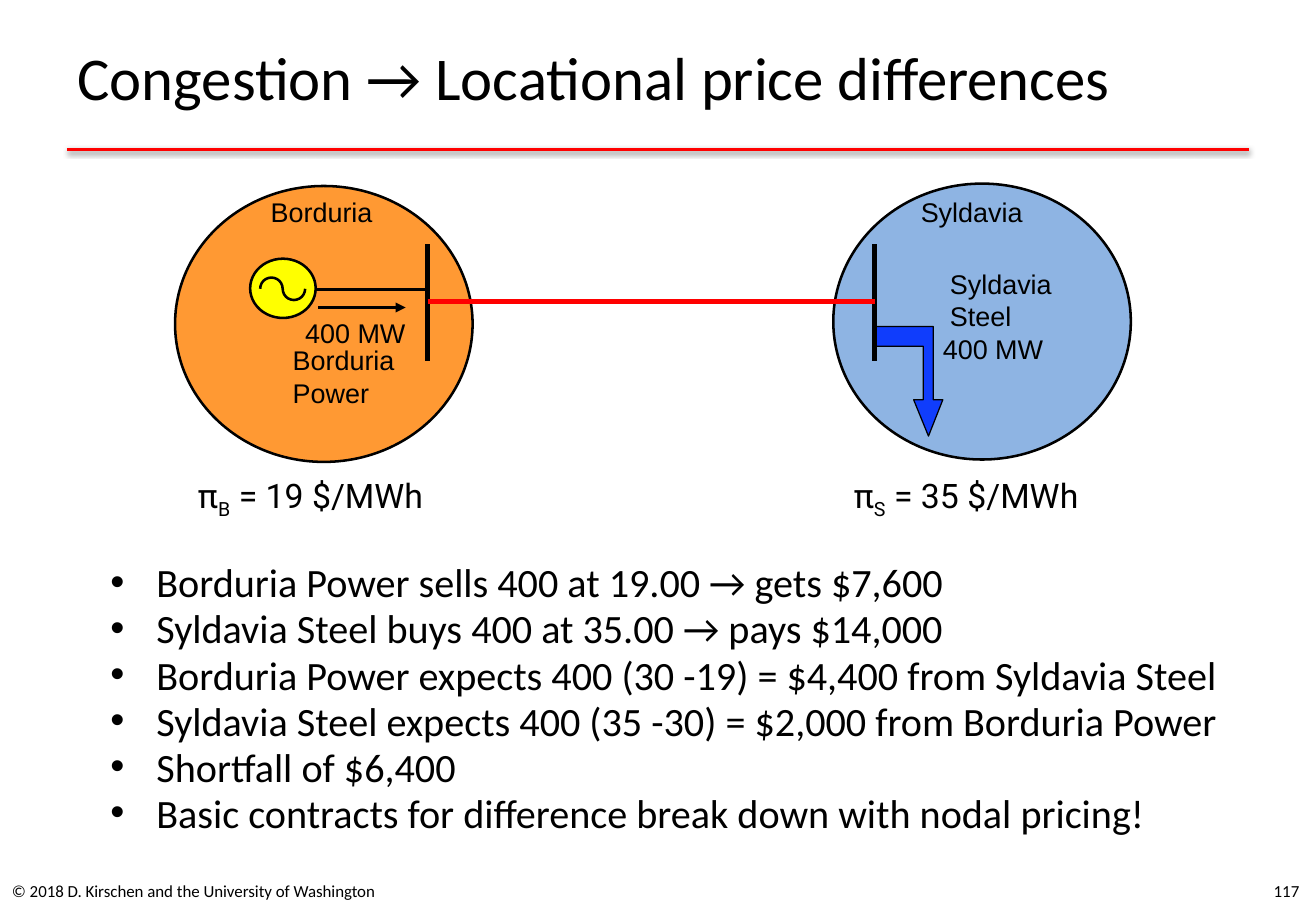
from math import cos, pi, sin
from lxml import etree
from pptx import Presentation
from pptx.dml.color import RGBColor
from pptx.enum.shapes import MSO_CONNECTOR, MSO_SHAPE
from pptx.enum.text import MSO_ANCHOR, PP_ALIGN
from pptx.oxml import parse_xml
from pptx.oxml.ns import nsdecls, qn
from pptx.util import Cm, Pt

COLORS = {
    "black": "000000", "red": "FF0000", "orange": "FF9933",
    "sky": "8EB4E3", "yellow": "FFFF00", "blue": "103DFC",
}

TITLE = "Congestion → Locational price differences"
POINTS = [
    "Borduria Power sells 400 at 19.00 → gets $7,600",
    "Syldavia Steel buys 400 at 35.00 → pays $14,000",
    "Borduria Power expects 400 (30 -19) = $4,400 from Syldavia Steel",
    "Syldavia Steel expects 400 (35 -30) = $2,000 from Borduria Power",
    "Shortfall of $6,400",
    "Basic contracts for difference break down with nodal pricing!",
]
FOOTERS = [
    ("© 2018 D. Kirschen and the University of Washington", 0, 8.99, PP_ALIGN.LEFT),
    ("117", 20.98, 6.43, PP_ALIGN.RIGHT),
]
REGIONS = [(3.66, 3.89, "orange"), (17.42, 3.84, "sky")]
LABELS = [
    ("Borduria", 5.66, 4.09, 3.05),
    ("400 MW", 6.38, 6.63, 2.74),
    ("Borduria Power", 6.12, 7.19, 3.05),
    ("Syldavia", 19.25, 4.09, 3.05),
    ("Syldavia Steel", 19.86, 5.59, 3.05),
    ("400 MW", 19.71, 6.96, 4.11),
]
PRICES = [("B", " = 19 $/MWh", 3.89), ("S", " = 35 $/MWh", 17.6)]
BUS_X = (8.94, 18.29)
BUS_Y = (5.11, 7.54)
LOAD_ARROW = [
    (19.41, 9.12), (19.1, 8.36), (19.3, 8.36), (19.3, 7.24), (18.29, 7.24),
    (18.29, 6.83), (19.51, 6.83), (19.51, 8.36), (19.71, 8.36),
]
WAVE_LEFT, WAVE_Y, WAVE_R, WAVE_STEPS = 5.44, 6.04, 0.235, 12

prs = Presentation()
prs.slide_width, prs.slide_height = Cm(27.51), Cm(19.05)
s = prs.slides.add_slide(prs.slide_layouts[6])


def rgb(name):
    return RGBColor.from_string(COLORS[name])


def style(sp, fill, width):
    sp.shadow.inherit = False
    if fill:
        sp.fill.solid()
        sp.fill.fore_color.rgb = rgb(fill)
    else:
        sp.fill.background()
    sp.line.color.rgb = rgb("black")
    sp.line.width = Pt(width)


def add_ellipse(x, y, w, h, fill):
    style(s.shapes.add_shape(MSO_SHAPE.OVAL, Cm(x), Cm(y), Cm(w), Cm(h)), fill, 1.5)


def add_outline(points, fill, width, close):
    pts = [(Cm(x), Cm(y)) for x, y in points]
    fb = s.shapes.build_freeform(*pts[0])
    fb.add_line_segments(pts[1:], close=close)
    style(fb.convert_to_shape(), fill, width)


def add_line(x1, y1, x2, y2, width, color="black"):
    ln = s.shapes.add_connector(MSO_CONNECTOR.STRAIGHT, Cm(x1), Cm(y1), Cm(x2), Cm(y2))
    ln.line.color.rgb = rgb(color)
    ln.line.width = Pt(width)
    effects = etree.SubElement(ln._element.spPr, qn("a:effectLst"))
    return ln, effects


def add_box(x, y, w, h, anchor=MSO_ANCHOR.TOP, inset=True, wrap=True):
    tf = s.shapes.add_textbox(Cm(x), Cm(y), Cm(w), Cm(h)).text_frame
    tf.word_wrap = wrap
    tf.vertical_anchor = anchor
    if not inset:
        tf.margin_left = tf.margin_top = tf.margin_right = tf.margin_bottom = 0
    return tf


def add_run(p, text, size, font):
    r = p.add_run()
    r.text = text
    r.font.size = Pt(size)
    r.font.name = font
    r.font.color.rgb = rgb("black")
    return r


_, effects = add_line(1.4, 3.12, 26.11, 3.12, 2, "red")
effects.append(parse_xml(
    f'<a:outerShdw {nsdecls("a")} blurRad="39370" dist="20320" dir="5400000" rotWithShape="0">'
    '<a:srgbClr val="000000"><a:alpha val="38000"/></a:srgbClr></a:outerShdw>'))

tf = add_box(1.37, 0.64, 24.31, 1.91, MSO_ANCHOR.MIDDLE)
add_run(tf.paragraphs[0], TITLE, 36, "Calibri")

tf = add_box(2.06, 11.73, 24.54, 7.19)
for i, text in enumerate(POINTS):
    p = tf.paragraphs[0] if i == 0 else tf.add_paragraph()
    p.line_spacing = 0.8
    p.space_before = Pt(4.5)
    add_run(p, text, 23.8, "Calibri")
    pPr = p._p.get_or_add_pPr()
    pPr.set("marL", str(Cm(0.96)))
    pPr.set("indent", str(-Cm(0.96)))
    etree.SubElement(pPr, qn("a:buFont")).set("typeface", "Arial")
    etree.SubElement(pPr, qn("a:buChar")).set("char", "•")

for text, x, w, align in FOOTERS:
    p = add_box(x, 18.11, w, 1.02, MSO_ANCHOR.MIDDLE).paragraphs[0]
    p.alignment = align
    add_run(p, text, 10, "Calibri")

for x, y, fill in REGIONS:
    add_ellipse(x, y, 6.22, 5.77, fill)

add_ellipse(5.23, 5.41, 1.37, 1.24, "yellow")
wave = []
for half, sign in enumerate((-1, 1)):
    center = WAVE_LEFT + WAVE_R * (1 + 2 * half)
    for k in range(half, WAVE_STEPS + 1):
        a = pi * k / WAVE_STEPS
        wave.append((center - WAVE_R * cos(a), WAVE_Y + sign * WAVE_R * sin(a)))
add_outline(wave, None, 1.5, False)
add_outline(LOAD_ARROW, "blue", 0.75, True)

for x in BUS_X:
    add_line(x, BUS_Y[0], x, BUS_Y[1], 3)
add_line(6.63, 6.05, 8.92, 6.05, 1.5)
add_line(BUS_X[0], 6.3, BUS_X[1], 6.3, 3, "red")
flow, _ = add_line(6.65, 6.43, 8.48, 6.43, 1.5)
etree.SubElement(flow.line._get_or_add_ln(), qn("a:tailEnd")).set("type", "triangle")

for text, x, y, w in LABELS:
    add_run(add_box(x, y, w, 0.94, inset=False).paragraphs[0], text, 16, "Arial")

for sub, value, x in PRICES:
    p = add_box(x, 9.8, 5.28, 1.12, wrap=False).paragraphs[0]
    add_run(p, "π", 20, "Roboto")
    add_run(p, sub, 20, "Roboto").font._element.set("baseline", "-25000")
    add_run(p, value, 20, "Roboto")

prs.save("out.pptx")
